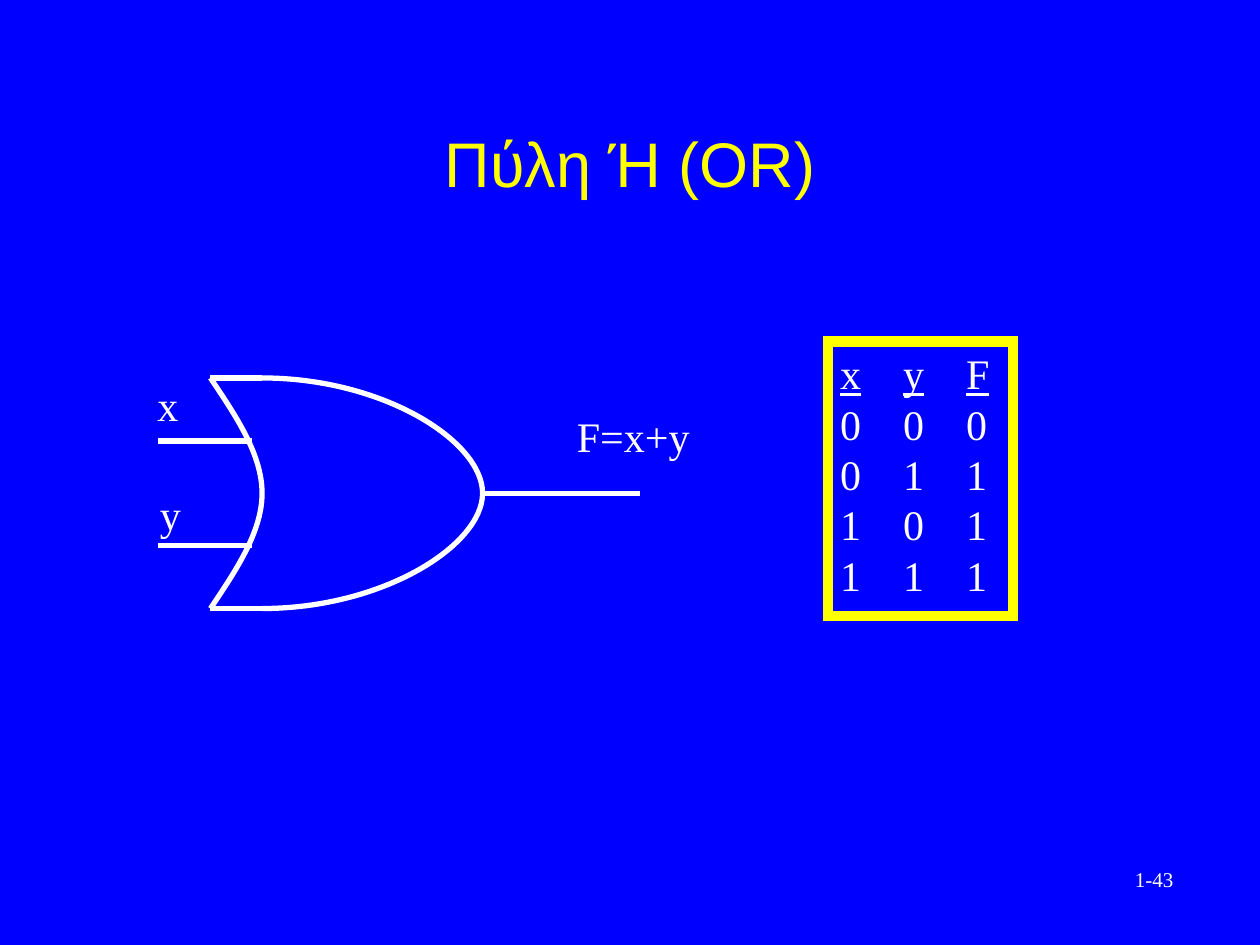
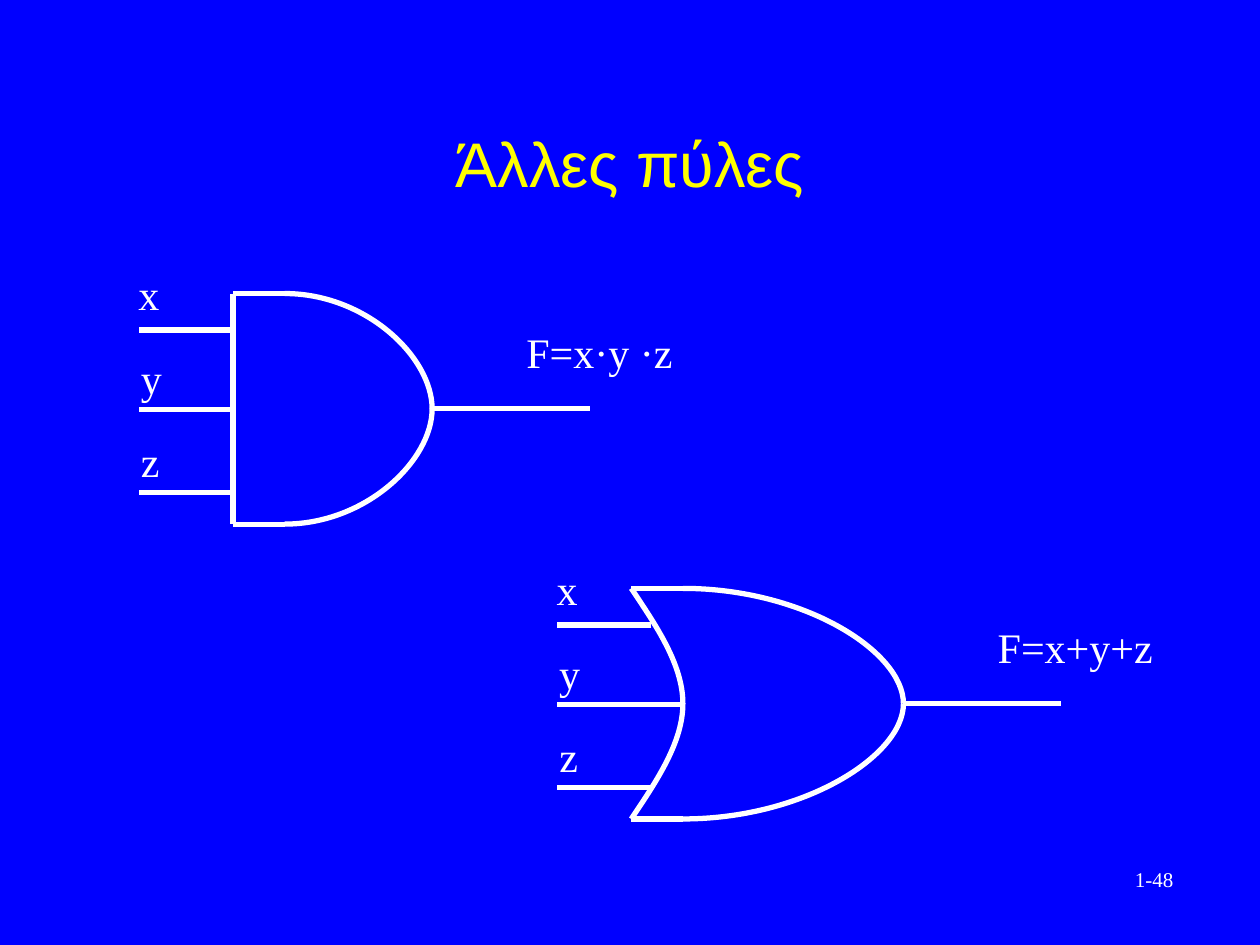
from lxml import etree
from pptx import Presentation
from pptx.dml.color import RGBColor
from pptx.enum.shapes import MSO_CONNECTOR as CONN, MSO_SHAPE as SHAPE
from pptx.enum.text import MSO_ANCHOR as ANCHOR, MSO_AUTO_SIZE as AUTO, PP_ALIGN as ALIGN
from pptx.oxml.ns import qn
from pptx.util import Inches, Pt

COLORS = {"back": "0000FF", "ink": "FFFFFF", "accent": "FFFF00"}
SERIF = "Times New Roman"
TITLE = {"name": "Arial", "size": Pt(36), "bold": False}
LABEL = {"name": SERIF, "size": Pt(24)}
FOOTER = {"name": SERIF, "size": Pt(12)}
GATE_H, EDGE = 1.83, 0.41


def rgb(name):
    """Return a palette colour."""
    return RGBColor.from_string(COLORS[name])


def style(font, values, color="ink"):
    """Apply format values and a colour to a font."""
    for key, value in values.items():
        setattr(font, key, value)
    font.color.rgb = rgb(color)


def stroke(shape, color="ink", width=3):
    """Set the outline of a shape or connector."""
    shape.line.color.rgb = rgb(color)
    shape.line.width = Pt(width)


def text(s, box, words, values=LABEL):
    """Add a one-line text box."""
    tf = s.shapes.add_textbox(*map(Inches, box)).text_frame
    tf.word_wrap, tf.auto_size = False, AUTO.SHAPE_TO_FIT_TEXT
    r = tf.paragraphs[0].add_run()
    r.text = words
    style(r.font, values)


def wire(s, x1, y1, x2, y2):
    """Add a straight line without a shadow."""
    c = s.shapes.add_connector(CONN.STRAIGHT, *map(Inches, (x1, y1, x2, y2)))
    stroke(c)
    etree.SubElement(c.element.spPr, qn("a:effectLst"))


def curve(s, *points):
    """Draw an open cubic curve: a start, then three points per segment."""
    dots = [tuple(map(Inches, point)) for point in points]
    builder = s.shapes.build_freeform(*dots[0])
    builder.add_line_segments(dots[1:], close=False)
    sp = builder.convert_to_shape()
    sp.fill.background()
    sp.shadow.inherit = False
    stroke(sp)
    outline = next(sp.element.iter(qn("a:pathLst")))[0]
    steps = outline.findall(qn("a:lnTo"))
    for i in range(0, len(steps), 3):
        cubic = etree.SubElement(outline, qn("a:cubicBezTo"))
        for step in steps[i:i + 3]:
            cubic.append(step[0])
            outline.remove(step)


def dome(s, left, top, radius):
    """Draw the rounded front of a gate as two quarter ellipses."""
    half, right = GATE_H / 2, left + radius
    mid = top + half
    for side in (-1, 1):
        edge = mid + side * half
        curve(s, (left, edge), (left + 0.55 * radius, edge),
              (right, mid + 0.45 * side * half), (right, mid))


def hollow_back(s, x, y):
    """Draw the curved back of an OR gate."""
    shifts = (0, EDGE / 2, EDGE, EDGE, EDGE, EDGE / 2, 0)
    curve(s, *((x + dx, y + i * GATE_H / 6) for i, dx in enumerate(shifts)))


def gate(s, box, inputs, output, lead, is_or):
    """Draw a gate in box (x, y, width) with labelled inputs and output."""
    x, y, width = box
    right, mid = x + width, y + GATE_H / 2
    dome(s, x + EDGE, y, width - EDGE)
    for edge in (y, y + GATE_H):
        wire(s, x + EDGE, edge, x, edge)
    if is_or:
        hollow_back(s, x, y)
    else:
        wire(s, x, y, x, y + GATE_H)
    start = x - lead
    for i, (name, dy, length) in enumerate(inputs):
        wire(s, start + length, y + dy, start, y + dy)
        shift, rise = (0.08, 0.5) if i else (0.1, 0.54)
        label_w = 0.35 if name == "z" else 0.37
        text(s, (start - shift, y + dy - rise, label_w, 0.5), name)
    wire(s, right, mid, right + 1.25, mid)
    words, label_w = output
    text(s, (right + 0.65, y + 0.21, label_w, 0.5), words)


def truth_table(s, box, rows):
    """Draw a framed truth table with tabbed columns."""
    sp = s.shapes.add_shape(SHAPE.RECTANGLE, *map(Inches, box))
    sp.fill.background()
    sp.shadow.inherit = False
    stroke(sp, "accent", 6)
    etree.SubElement(sp.element.spPr.find(qn("a:ln")), qn("a:miter"), lim="800000")
    tf = sp.text_frame
    tf.word_wrap, tf.vertical_anchor = True, ANCHOR.TOP
    for i, row in enumerate(rows):
        p = tf.paragraphs[0] if i == 0 else tf.add_paragraph()
        p.alignment = ALIGN.LEFT
        tabs = etree.SubElement(p._p.get_or_add_pPr(), qn("a:tabLst"))
        for column in range(1, len(row)):
            etree.SubElement(tabs, qn("a:tab"), pos=str(Inches(column / 2)), algn="l")
        r = p.add_run()
        r.text = "\t".join(row)
        style(r.font, {**LABEL, "underline": i == 0})


def base_slide(prs, title, number):
    """Add a slide with its title and page number."""
    s = prs.slides.add_slide(prs.slide_layouts[5])
    sp = s.shapes.title
    sp.left, sp.top, sp.width, sp.height = map(Inches, (0.75, 0.66, 8.5, 1.25))
    tf = sp.text_frame
    tf.vertical_anchor = ANCHOR.MIDDLE
    p = tf.paragraphs[0]
    p.alignment = ALIGN.CENTER
    r = p.add_run()
    r.text = title
    style(r.font, TITLE, "accent")
    text(s, (8.91, 6.83, 0.53, 0.3), number, FOOTER)
    return s


def or_slide(prs):
    """Build the slide on the two-input OR gate."""
    s = base_slide(prs, "Πύλη Ή (OR)", "1-43")
    gate(s, (1.67, 3, 2.16), [("x", 0.5, 0.75), ("y", 1.33, 0.75)],
         ("F=x+y", 1.1), 0.42, True)
    truth_table(s, (6.57, 2.71, 1.47, 2.18), ["xyF", "000", "011", "101", "111"])


def other_gates_slide(prs):
    """Build the slide on three-input gates."""
    s = base_slide(prs, "Άλλες πύλες", "1-48")
    for box, output, lead, middle, is_or in (
            ((1.85, 2.33, 1.58), ("F=x·y ·z", 1.37), 0.75, 0.75, False),
            ((5.01, 4.67, 2.16), ("F=x+y+z", 1.43), 0.59, 1, True)):
        inputs = [("x", 0.29, 0.75), ("y", 0.92, middle), ("z", 1.58, 0.75)]
        gate(s, box, inputs, output, lead, is_or)


def main():
    """Build and save the presentation."""
    prs = Presentation()
    prs.slide_width, prs.slide_height = Inches(10), Inches(7.5)
    fill = prs.slide_master.background.fill
    fill.solid()
    fill.fore_color.rgb = rgb("back")
    or_slide(prs)
    other_gates_slide(prs)
    prs.save("out.pptx")


if __name__ == "__main__":
    main()
